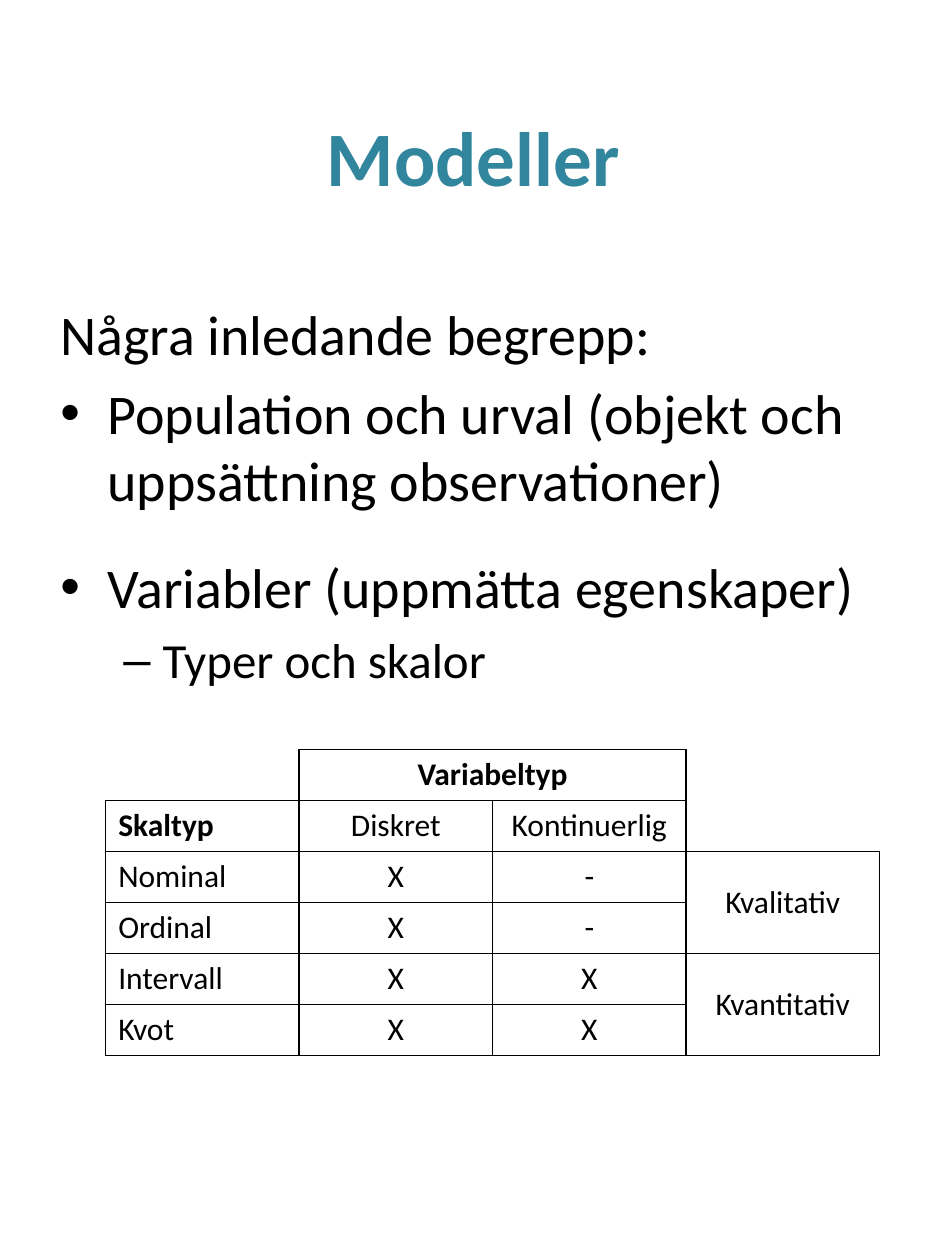
from dataclasses import dataclass
from typing import Optional

from lxml.etree import SubElement
from pptx import Presentation
from pptx.dml.color import RGBColor
from pptx.enum.text import MSO_ANCHOR, PP_ALIGN
from pptx.oxml.ns import qn
from pptx.util import Cm, Pt


@dataclass(frozen=True)
class Theme:
    font: str = "Calibri"
    accent: str = "31859C"
    ink: str = "000000"
    title: int = 44
    body: int = 32
    sub: int = 28
    table: int = 18
    border: int = 1


@dataclass(frozen=True)
class Box:
    left: float
    top: float
    width: float
    height: float

    def lengths(self) -> tuple:
        return Cm(self.left), Cm(self.top), Cm(self.width), Cm(self.height)


@dataclass(frozen=True)
class BodyLine:
    text: str
    size: int
    space_before: float
    margin: float = 0.95
    hanging: float = 0.95
    bullet: Optional[str] = None


@dataclass(frozen=True)
class Merge:
    row: int
    column: int
    last_row: int
    last_column: int


THEME = Theme()
TITLE_BOX = Box(0.97, 1.02, 17.15, 4.24)
BODY_BOX = Box(0.97, 5.92, 17.37, 18.24)
TABLE_BOX = Box(2.13, 15.11, 15.6, 6.17)

BODY_LINES = [
    BodyLine("Några inledande begrepp:", THEME.body, 6.4),
    BodyLine("Population och urval (objekt och uppsättning observationer)",
             THEME.body, 6.4, bullet="•"),
    BodyLine("Variabler (uppmätta egenskaper)", THEME.body, 23, bullet="•"),
    BodyLine("Typer och skalor", THEME.sub, 5.6, 2.06, 0.79, "–"),
]

SCALE_ROWS = [
    ["", "Variabeltyp", "", ""],
    ["Skaltyp", "Diskret", "Kontinuerlig", ""],
    ["Nominal", "X", "-", "Kvalitativ"],
    ["Ordinal", "X", "-", ""],
    ["Intervall", "X", "X", "Kvantitativ"],
    ["Kvot", "X", "X", ""],
]
MERGES = [Merge(0, 1, 0, 2), Merge(2, 3, 3, 3), Merge(4, 3, 5, 3)]
BOLD_TEXTS = {"Variabeltyp", "Skaltyp"}
OPEN_CELL_EDGES = {(0, 0): "RB", (0, 3): "L", (1, 3): "LB"}


def add_run(paragraph, text: str, size: int, color: str, bold: bool = False) -> None:
    run = paragraph.add_run()
    run.text = text
    run.font.name = THEME.font
    run.font.size = Pt(size)
    run.font.bold = bold
    run.font.color.rgb = RGBColor.from_string(color)


def add_text_frame(slide, box: Box, anchor: MSO_ANCHOR):
    text_frame = slide.shapes.add_textbox(*box.lengths()).text_frame
    text_frame.word_wrap = True
    text_frame.vertical_anchor = anchor
    return text_frame


def add_title(slide) -> None:
    paragraph = add_text_frame(slide, TITLE_BOX, MSO_ANCHOR.MIDDLE).paragraphs[0]
    paragraph.alignment = PP_ALIGN.CENTER
    add_run(paragraph, "Modeller", THEME.title, THEME.accent, bold=True)


def add_body(slide) -> None:
    text_frame = add_text_frame(slide, BODY_BOX, MSO_ANCHOR.TOP)
    for index, line in enumerate(BODY_LINES):
        paragraph = text_frame.add_paragraph() if index else text_frame.paragraphs[0]
        paragraph.space_before = Pt(line.space_before)
        properties = paragraph._p.get_or_add_pPr()
        properties.set("marL", str(Cm(line.margin)))
        properties.set("indent", str(-Cm(line.hanging)))
        if line.bullet:
            SubElement(properties, qn("a:buFont"), typeface="Arial")
            SubElement(properties, qn("a:buChar"), char=line.bullet)
        add_run(paragraph, line.text, line.size, THEME.ink)


def set_borders(cell, edges: str) -> None:
    properties = cell._tc.get_or_add_tcPr()
    for edge in "LRTB":
        line = SubElement(properties, qn(f"a:ln{edge}"), w=str(Pt(THEME.border)))
        if edge in edges:
            fill = SubElement(line, qn("a:solidFill"))
            SubElement(fill, qn("a:srgbClr"), val=THEME.ink)
        else:
            SubElement(line, qn("a:noFill"))


def add_scale_table(slide) -> None:
    row_count, column_count = len(SCALE_ROWS), len(SCALE_ROWS[0])
    table = slide.shapes.add_table(row_count, column_count, *TABLE_BOX.lengths()).table
    table.first_row = False
    table.horz_banding = False
    for row, texts in enumerate(SCALE_ROWS):
        for column, text in enumerate(texts):
            cell = table.cell(row, column)
            set_borders(cell, OPEN_CELL_EDGES.get((row, column), "LRTB"))
            cell.fill.background()
            if not text:
                continue
            paragraph = cell.text_frame.paragraphs[0]
            paragraph.alignment = PP_ALIGN.CENTER if column else PP_ALIGN.LEFT
            add_run(paragraph, text, THEME.table, THEME.ink, text in BOLD_TEXTS)
            if column == column_count - 1:
                cell.vertical_anchor = MSO_ANCHOR.MIDDLE
    for merge in MERGES:
        last_cell = table.cell(merge.last_row, merge.last_column)
        table.cell(merge.row, merge.column).merge(last_cell)


def main() -> None:
    presentation = Presentation()
    presentation.slide_width = Cm(19.05)
    presentation.slide_height = Cm(25.4)
    slide = presentation.slides.add_slide(presentation.slide_layouts[6])
    add_title(slide)
    add_body(slide)
    add_scale_table(slide)
    presentation.save("out.pptx")


if __name__ == "__main__":
    main()
